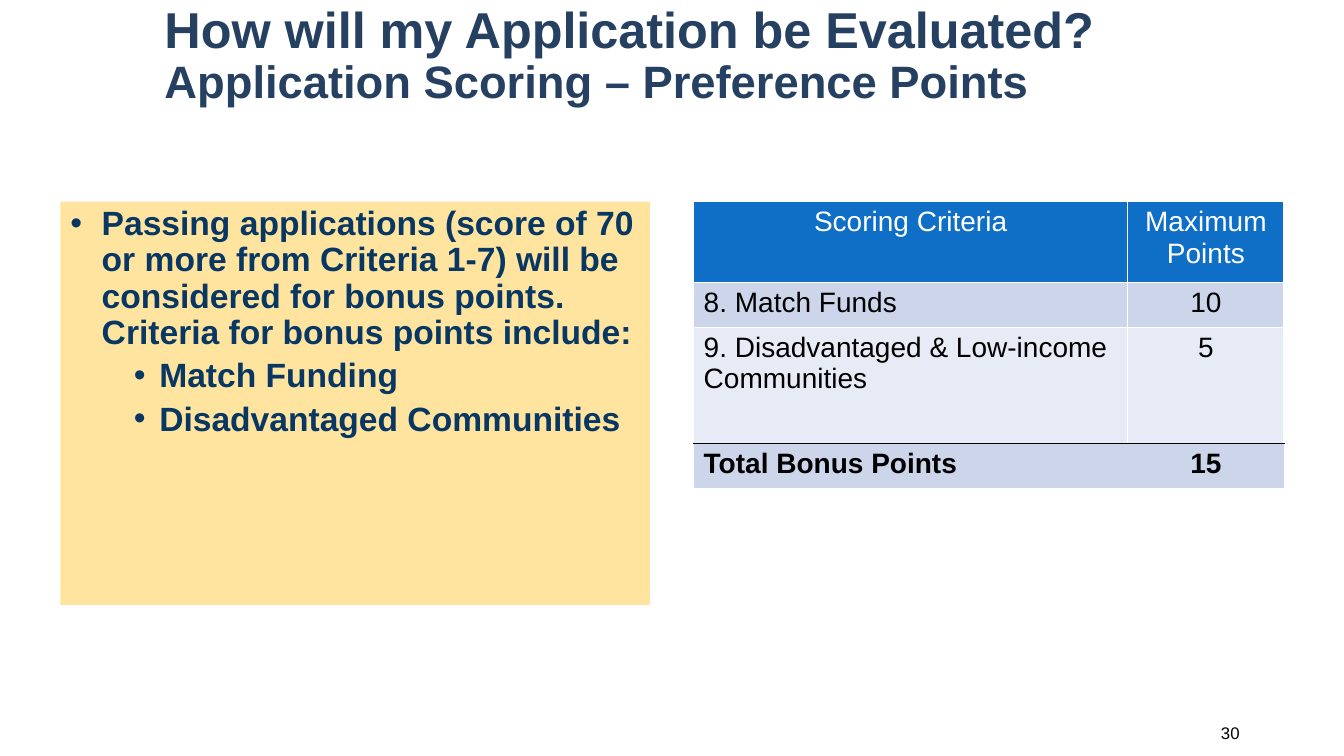
from lxml.etree import SubElement
from pptx import Presentation
from pptx.dml.color import RGBColor
from pptx.enum.text import MSO_ANCHOR as Anchor, MSO_AUTO_SIZE as AutoSize, PP_ALIGN as Align
from pptx.oxml.ns import qn
from pptx.util import Cm, Pt

COLOURS = {
    "title": "254061", "body": "083763", "panel": "FFE49F", "header": "0F6FC6",
    "band": "CCD5EA", "light": "E7EBF5", "white": "FFFFFF", "black": "000000",
}
BULLETS = [
    (0, "Passing applications (score of 70 or more from Criteria 1-7) will be considered "
        "for bonus points. Criteria for bonus points include:"),
    (1, "Match Funding"),
    (1, "Disadvantaged Communities"),
]
LEVELS = [
    {"margin": 0.79, "indent": -0.79},
    {"margin": 2.24, "indent": -0.64},
]
WHITE_EDGES = dict.fromkeys("LRTB", "white")
ROWS = [
    {"texts": ("Scoring Criteria", "Maximum Points"), "height": 2.03, "fill": "header",
     "colour": "white", "bold": False, "first": Align.CENTER, "edges": WHITE_EDGES},
    {"texts": ("8. Match Funds", "10"), "height": 1.14, "fill": "band",
     "colour": "black", "bold": False, "first": Align.LEFT, "edges": WHITE_EDGES},
    {"texts": ("9. Disadvantaged & Low-income Communities", "5"), "height": 2.92, "fill": "light",
     "colour": "black", "bold": False, "first": Align.LEFT, "edges": WHITE_EDGES | {"B": "black"}},
    {"texts": ("Total Bonus Points", "15"), "height": 1.14, "fill": "band",
     "colour": "black", "bold": True, "first": Align.LEFT, "edges": {"T": "black"}},
]
COLUMN_WIDTHS = (10.94, 3.94)


def rgb(name):
    return RGBColor.from_string(COLOURS[name])


def apply(target, formats):
    for name, value in formats.items():
        setattr(target, name, value)


def style(font, size, colour, bold=False):
    apply(font, {"name": "Arial", "size": Pt(size), "bold": bold})
    font.color.rgb = rgb(colour)


def place(shape, box):
    apply(shape, dict(zip(("left", "top", "width", "height"), map(Cm, box))))


def add_bullet(paragraph, margin, indent):
    properties = paragraph._p.get_or_add_pPr()
    properties.set("marL", str(Cm(margin)))
    properties.set("indent", str(Cm(indent)))
    SubElement(properties, qn("a:buFont")).set("typeface", "Arial")
    SubElement(properties, qn("a:buChar")).set("char", "•")


def add_edges(cell, edges):
    properties = cell._tc.get_or_add_tcPr()
    for side in "LRTB":
        line = SubElement(properties, qn(f"a:ln{side}"), w=str(Pt(1)))
        if side in edges:
            fill = SubElement(line, qn("a:solidFill"))
            SubElement(fill, qn("a:srgbClr")).set("val", COLOURS[edges[side]])
        else:
            SubElement(line, qn("a:noFill"))


def fill_title(title, box):
    place(title, box)
    frame = title.text_frame
    apply(frame, {"auto_size": AutoSize.NONE, "word_wrap": True,
                  "vertical_anchor": Anchor.MIDDLE, "margin_bottom": Cm(1.5)})
    paragraph = frame.paragraphs[0]
    apply(paragraph, {"alignment": Align.LEFT, "line_spacing": 0.9})
    heading = paragraph.add_run()
    heading.text = "How will my Application be Evaluated?"
    style(heading.font, 36, "title", True)
    paragraph.add_line_break()
    subheading = paragraph.add_run()
    subheading.text = "Application Scoring – Preference Points"
    style(subheading.font, 32.4, "title", True)


def fill_bullets(body, box):
    place(body, box)
    body.fill.solid()
    body.fill.fore_color.rgb = rgb("panel")
    frame = body.text_frame
    apply(frame, {"auto_size": AutoSize.NONE, "word_wrap": True, "vertical_anchor": Anchor.TOP})
    for index, (level, text) in enumerate(BULLETS):
        paragraph = frame.add_paragraph() if index else frame.paragraphs[0]
        add_bullet(paragraph, **LEVELS[level])
        apply(paragraph, {"text": text, "level": level, "alignment": Align.LEFT,
                          "line_spacing": 0.9, "space_before": Pt(5 if index else 0)})
        style(paragraph.font, 24, "body", True)


def add_scoring_table(slide, left, top):
    height = sum(row["height"] for row in ROWS)
    table = slide.shapes.add_table(
        len(ROWS), len(COLUMN_WIDTHS), Cm(left), Cm(top), Cm(sum(COLUMN_WIDTHS)), Cm(height)
    ).table
    table.horz_banding = False
    for column, width in zip(table.columns, COLUMN_WIDTHS):
        column.width = Cm(width)
    for table_row, row in zip(table.rows, ROWS):
        table_row.height = Cm(row["height"])
        for cell, text, alignment in zip(table_row.cells, row["texts"], (row["first"], Align.CENTER)):
            add_edges(cell, row["edges"])
            cell.fill.solid()
            cell.fill.fore_color.rgb = rgb(row["fill"])
            paragraph = cell.text_frame.paragraphs[0]
            apply(paragraph, {"text": text, "alignment": alignment})
            style(paragraph.runs[0].font, 20, row["colour"], row["bold"])


def add_page_number(slide, box):
    frame = slide.shapes.add_textbox(*map(Cm, box)).text_frame
    apply(frame, {"word_wrap": True, "vertical_anchor": Anchor.MIDDLE})
    paragraph = frame.paragraphs[0]
    apply(paragraph, {"text": "30", "alignment": Align.RIGHT})
    style(paragraph.runs[0].font, 12, "black")


def add_scoring_slide(presentation):
    slide = presentation.slides.add_slide(presentation.slide_layouts[1])
    fill_title(slide.shapes.title, (3.89, 0.66, 27.66, 2.9))
    fill_bullets(slide.placeholders[1], (1.52, 5.08, 14.86, 10.16))
    add_scoring_table(slide, 17.48, 5.08)
    add_page_number(slide, (26.59, 17.96, 4.9, 1.02))


def main():
    presentation = Presentation()
    apply(presentation, {"slide_width": Cm(33.87), "slide_height": Cm(19.05)})
    add_scoring_slide(presentation)
    presentation.save("out.pptx")


if __name__ == "__main__":
    main()
